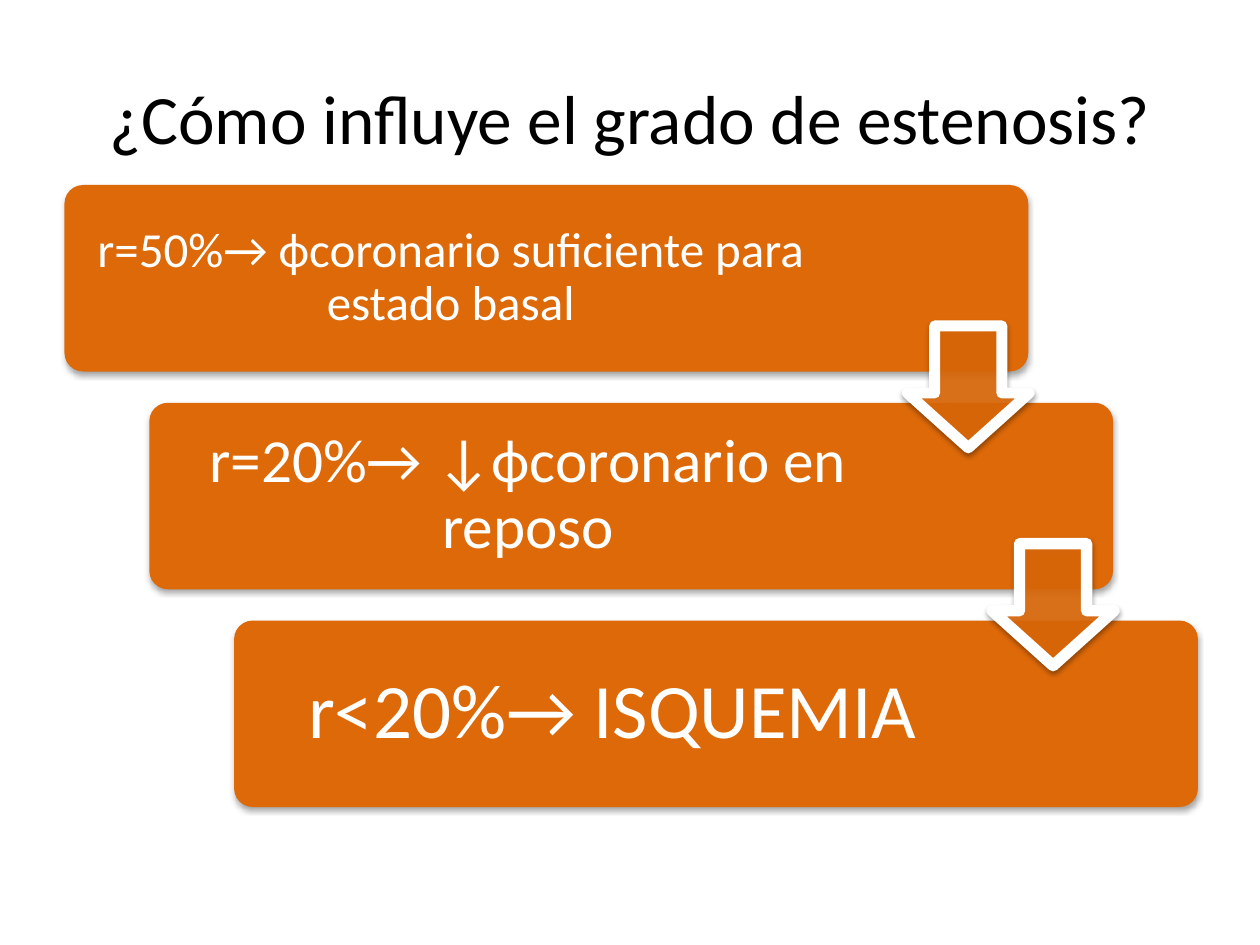
from lxml import etree
from pptx import Presentation
from pptx.dml.color import RGBColor
from pptx.enum.shapes import MSO_SHAPE as SHAPE
from pptx.enum.text import MSO_ANCHOR as ANCHOR, PP_ALIGN as ALIGN
from pptx.oxml import parse_xml
from pptx.oxml.ns import nsdecls, qn
from pptx.util import Cm, Pt

ORANGE, WHITE, BLACK = "DD6909", "FFFFFF", "000000"


def add_text(tf, text, size, color):
    """Write one centred run, vertically centred in its frame."""
    tf.word_wrap = True
    tf.vertical_anchor = ANCHOR.MIDDLE
    p = tf.paragraphs[0]
    p.alignment = ALIGN.CENTER
    r = p.add_run()
    r.text = text
    r.font.name, r.font.size = "Calibri", Pt(size)
    r.font.color.rgb = RGBColor.from_string(color)
    return p


def add_orange_shape(kind, left, top, width, height, adjustments):
    """Add an orange shape with a soft shadow below it."""
    sp = s.shapes.add_shape(kind, Cm(left), Cm(top), Cm(width), Cm(height))
    for i, value in enumerate(adjustments):
        sp.adjustments[i] = value
    sp.fill.solid()
    sp.fill.fore_color.rgb = RGBColor.from_string(ORANGE)
    sp.line.fill.background()
    sp.shadow.inherit = False
    sp._element.spPr.find(qn("a:effectLst")).append(parse_xml(
        f'<a:outerShdw {nsdecls("a")} blurRad="{Pt(3.1)}" dist="{Pt(1.8)}" '
        f'dir="5400000" rotWithShape="0"><a:srgbClr val="{BLACK}">'
        '<a:alpha val="35000"/></a:srgbClr></a:outerShdw>'))
    return sp


prs = Presentation()
prs.slide_width, prs.slide_height = Cm(25.4), Cm(19.05)
s = prs.slides.add_slide(prs.slide_layouts[5])

title = s.shapes.title
title.left, title.top, title.width, title.height = Cm(1.27), Cm(0.76), Cm(22.86), Cm(3.18)
add_text(title.text_frame, "¿Cómo influye el grado de estenosis?", 39.6, BLACK)

# Each step moves right and down by the same amount
STEP_X, STEP_Y = 1.71, 4.39
steps = [
    ("r=50%→ фcoronario suficiente para estado basal", 28, 15.57, 0.3),
    ("r=20%→ ↓фcoronario en reposo", 35, 15.27, 0.38),
    ("r<20%→ ISQUEMIA", 44, 15.27, 0.46),
]
for i, (text, size, text_width, inset) in enumerate(steps):
    left, top = 1.3 + i * STEP_X, 3.73 + i * STEP_Y
    add_orange_shape(SHAPE.ROUNDED_RECTANGLE, left, top, 19.43, 3.76, [0.1])
    tb = s.shapes.add_textbox(Cm(left), Cm(top), Cm(text_width), Cm(3.76))
    tf = tb.text_frame
    tf.margin_left = tf.margin_right = tf.margin_top = tf.margin_bottom = Cm(inset)
    add_text(tf, text, size, WHITE).line_spacing = 0.9

for i, line_width in enumerate((6.25, 6.5)):
    arrow = add_orange_shape(SHAPE.DOWN_ARROW, 18.29 + i * STEP_X, 6.57 + i * STEP_Y,
                             2.46, 2.46, [0.55, 0.45])
    color = arrow._element.spPr.find(qn("a:solidFill"))[0]
    etree.SubElement(color, qn("a:alpha"), val="90000")
    arrow.line.color.rgb = RGBColor.from_string(WHITE)
    arrow.line.width = Pt(line_width)
    etree.SubElement(arrow._element.spPr.find(qn("a:ln")), qn("a:round"))

prs.save("out.pptx")
